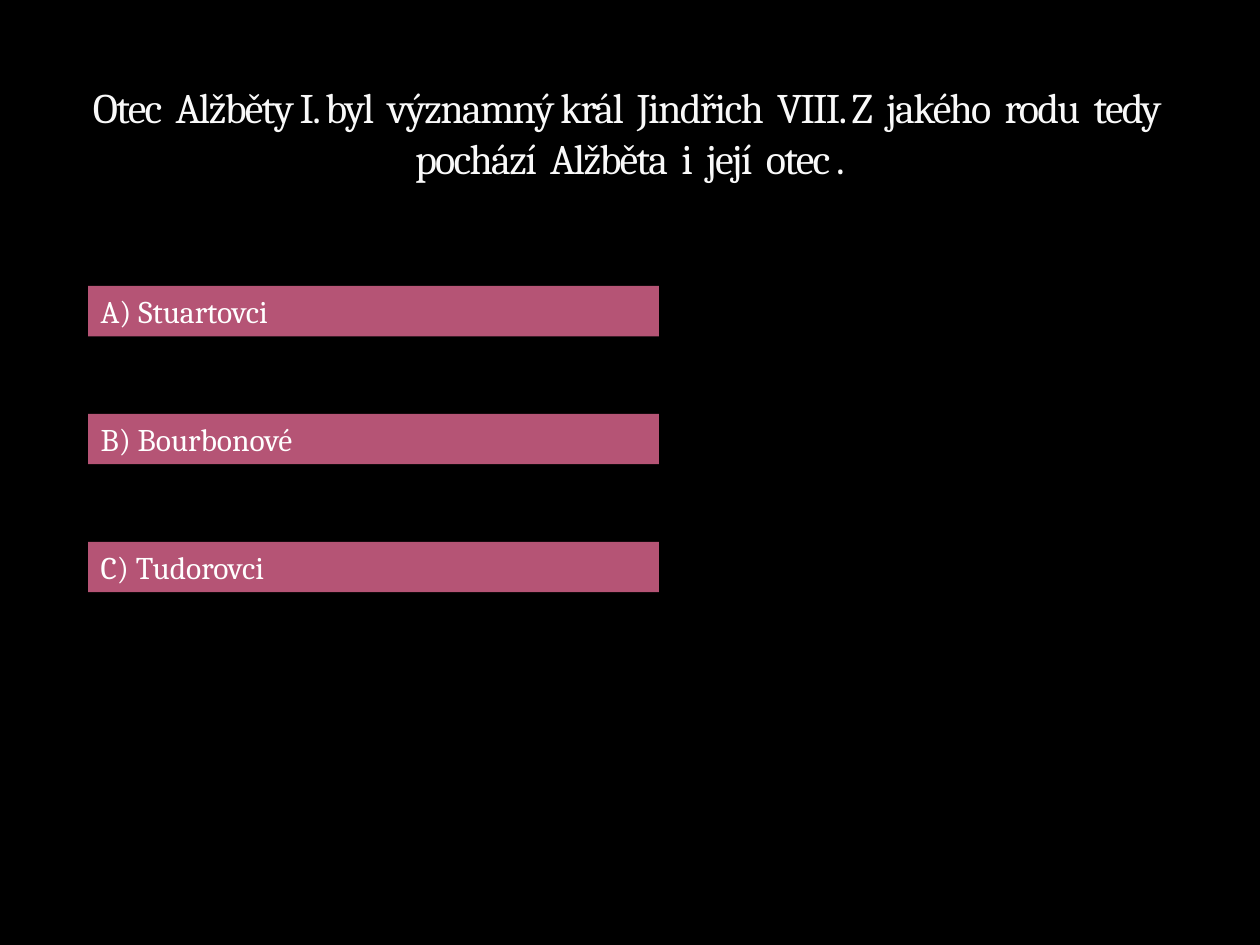
from pptx import Presentation
from pptx.dml.color import RGBColor
from pptx.enum.shapes import MSO_SHAPE as Shape
from pptx.enum.text import MSO_ANCHOR as Anchor, MSO_AUTO_SIZE as AutoSize, PP_ALIGN as Align
from pptx.util import Inches, Pt

COLORS = {"background": "000000", "question": "F9F9F9", "bar": "B55475", "answer": "FFFFFF"}
FONT = "Cambria"
QUESTION = (
    "Otec  Alžběty I. byl  významný král  Jindřich  VIII. Z  jakého  rodu  tedy  "
    "pochází  Alžběta  i  její  otec ."
)
ANSWERS = ["A) Stuartovci", "B) Bourbonové", "C) Tudorovci"]


def color(name):
    """Return the named palette colour."""
    return RGBColor.from_string(COLORS[name])


def add_run(paragraph, words, size, color_name):
    """Append a styled run to the paragraph and return it."""
    run = paragraph.add_run()
    run.text = words
    run.font.name = FONT
    run.font.size = Pt(size)
    run.font.color.rgb = color(color_name)
    return run


def add_question(slide, left, top, width, height):
    """Place the centred question at the bottom of its box."""
    frame = slide.shapes.add_textbox(left, top, width, height).text_frame
    frame.word_wrap = True
    frame.auto_size = AutoSize.NONE
    frame.vertical_anchor = Anchor.BOTTOM
    paragraph = frame.paragraphs[0]
    paragraph.alignment = Align.CENTER
    wording = add_run(paragraph, QUESTION, 24, "question")
    wording._r.get_or_add_rPr().set("spc", "-100")


def add_answers(slide, left, top, width, height):
    """Spread the answer bars evenly from the top to the bottom of the box."""
    bar_height = Inches(0.4)
    pitch = (height - bar_height) // (len(ANSWERS) - 1)
    for index, answer in enumerate(ANSWERS):
        bar = slide.shapes.add_shape(
            Shape.RECTANGLE, left, top + index * pitch, width, bar_height
        )
        bar.shadow.inherit = False
        bar.fill.solid()
        bar.fill.fore_color.rgb = color("bar")
        bar.line.fill.background()
        frame = bar.text_frame
        frame.word_wrap = True
        frame.auto_size = AutoSize.SHAPE_TO_FIT_TEXT
        frame.vertical_anchor = Anchor.TOP
        paragraph = frame.paragraphs[0]
        paragraph.alignment = Align.LEFT
        add_run(paragraph, answer, 18, "answer")


def main():
    """Build the quiz slide and save it."""
    deck = Presentation()
    deck.slide_width, deck.slide_height = Inches(10), Inches(7.5)
    slide = deck.slides.add_slide(deck.slide_layouts[6])
    slide.background.fill.solid()
    slide.background.fill.fore_color.rgb = color("background")
    add_question(slide, Inches(0.5), Inches(0.17), Inches(9), Inches(1.33))
    add_answers(slide, Inches(0.7), Inches(2.27), Inches(4.53), Inches(2.43))
    deck.save("out.pptx")


if __name__ == "__main__":
    main()
